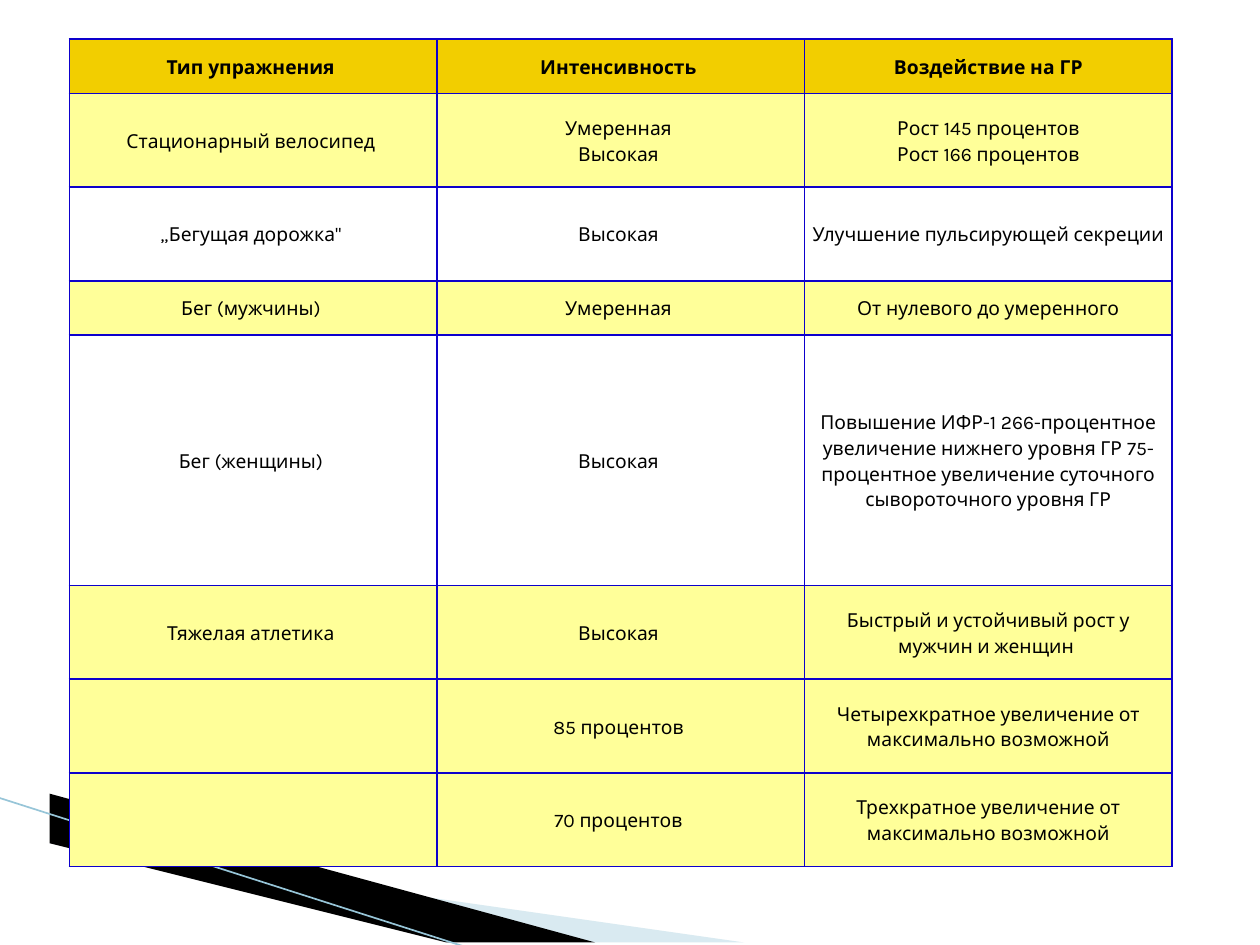
import pptx
import pptx.dml.color
import pptx.enum.shapes
import pptx.enum.text
import pptx.oxml
import pptx.oxml.ns
import pptx.util
from lxml import etree

Cm = pptx.util.Cm
Pt = pptx.util.Pt
RGBColor = pptx.dml.color.RGBColor
qn = pptx.oxml.ns.qn

BLACK = RGBColor(0x00, 0x00, 0x00)
PALE_BLUE = RGBColor(0xA0, 0xCB, 0xDC)
SKY_BLUE = RGBColor(0x97, 0xC5, 0xD8)
BORDER_BLUE = RGBColor(0x0D, 0x00, 0xCC)
GOLD = RGBColor(0xF2, 0xCE, 0x00)
YELLOW = RGBColor(0xFF, 0xFF, 0x99)

COLUMN_WIDTH = 7.41
# Height in cm, fill, cell texts
EXERCISES = [
    (1.09, GOLD, ["Тип упражнения ", "Интенсивность ", "Воздействие на ГР"]),
    (1.89, YELLOW, ["Стационарный велосипед ", "Умеренная \nВысокая ",
                    "Рост 145 процентов\nРост 166 процентов"]),
    (1.89, None, ["„Бегущая дорожка\" ", "Высокая ", "Улучшение пульсирующей секреции"]),
    (1.09, YELLOW, ["Бег (мужчины) ", "Умеренная ", "От нулевого до умеренного"]),
    (5.05, None, ["Бег (женщины) ", "Высокая ",
                  "Повышение ИФР-1 266-процентное увеличение нижнего уровня ГР "
                  "75-процентное увеличение суточного сывороточного уровня ГР"]),
    (1.89, YELLOW, ["Тяжелая атлетика ", "Высокая ",
                    "Быстрый и устойчивый рост у мужчин и женщин "]),
    (1.89, YELLOW, ["", "85 процентов ",
                    "Четырехкратное увеличение от максимально возможной"]),
    (1.89, YELLOW, ["", "70 процентов ",
                    "Трехкратное увеличение от максимально возможной"]),
]


class SlideBuilder:
    font_name = "Karla"
    font_size = Pt(11)
    cell_margin = Cm(0.1)

    def __init__(self, slide):
        self.slide = slide

    def streak(self, points, color, opacity=100):
        """Draw a filled outline through points given in cm."""
        builder = self.slide.shapes.build_freeform(*points[0], scale=Cm(1))
        builder.add_line_segments(points[1:])
        streak = builder.convert_to_shape()
        streak.shadow.inherit = False
        streak.line.fill.background()
        streak.fill.solid()
        streak.fill.fore_color.rgb = color
        if opacity < 100:
            tint = streak.fill._xPr.find(".//" + qn("a:srgbClr"))
            etree.SubElement(tint, qn("a:alpha"), val=str(opacity * 1000))

    def line(self, start, end, color, width):
        line = self.slide.shapes.add_connector(
            pptx.enum.shapes.MSO_CONNECTOR.STRAIGHT, *map(Cm, start + end))
        line.line.color.rgb = color
        line.line.width = Pt(width)
        etree.SubElement(line._element.spPr, qn("a:effectLst"))

    def table(self, left, top, rows):
        columns = len(rows[0][2])
        table = self.slide.shapes.add_table(
            len(rows), columns, Cm(left), Cm(top), Cm(COLUMN_WIDTH * columns),
            Cm(sum(height for height, _, _ in rows))).table
        for column in table.columns:
            column.width = Cm(COLUMN_WIDTH)
        for index, (height, fill, texts) in enumerate(rows):
            table.rows[index].height = Cm(height)
            for cell, text in zip(table.rows[index].cells, texts):
                self.cell(cell, text, fill, bold=index == 0)

    def cell(self, cell, text, fill, bold):
        cell.margin_left = cell.margin_right = self.cell_margin
        cell.margin_top = cell.margin_bottom = self.cell_margin
        cell.vertical_anchor = pptx.enum.text.MSO_ANCHOR.MIDDLE
        self.borders(cell)
        if fill is None:
            cell.fill.background()
        else:
            cell.fill.solid()
            cell.fill.fore_color.rgb = fill

        paragraph = cell.text_frame.paragraphs[0]
        paragraph.alignment = pptx.enum.text.PP_ALIGN.CENTER
        paragraph.line_spacing = 1.15
        paragraph.space_after = Pt(10)
        if not text:
            return
        for number, words in enumerate(text.split("\n")):
            if number:
                paragraph.add_line_break()
            run = paragraph.add_run()
            run.text = words
            run.font.name = self.font_name
            run.font.size = self.font_size
            run.font.bold = bold
            run.font.color.rgb = BLACK

    def borders(self, cell):
        properties = cell._tc.get_or_add_tcPr()
        for side in ("a:lnL", "a:lnR", "a:lnT", "a:lnB"):
            border = etree.SubElement(properties, qn(side), w=str(Pt(1)))
            solid = etree.SubElement(border, qn("a:solidFill"))
            etree.SubElement(solid, qn("a:srgbClr"), val=str(BORDER_BLUE))


def main():
    presentation = pptx.Presentation()
    presentation.slide_width = Cm(25.4)
    presentation.slide_height = Cm(19.05)
    blank_layout = presentation.slide_layouts[6]
    builder = SlideBuilder(presentation.slides.add_slide(blank_layout))

    builder.streak([(1.4, 16.54), (15.11, 19.08), (11.58, 19.08), (1.4, 16.51)],
                   PALE_BLUE, opacity=40)
    builder.streak([(1.35, 16.48), (11.61, 19.08), (9.45, 19.1), (1.37, 16.51)], BLACK)
    builder.line((-0.03, 16.08), (9.42, 19.1), SKY_BLUE, 0.95)
    builder.table(1.4, 0.79, EXERCISES)

    presentation.save("out.pptx")


if __name__ == "__main__":
    main()
